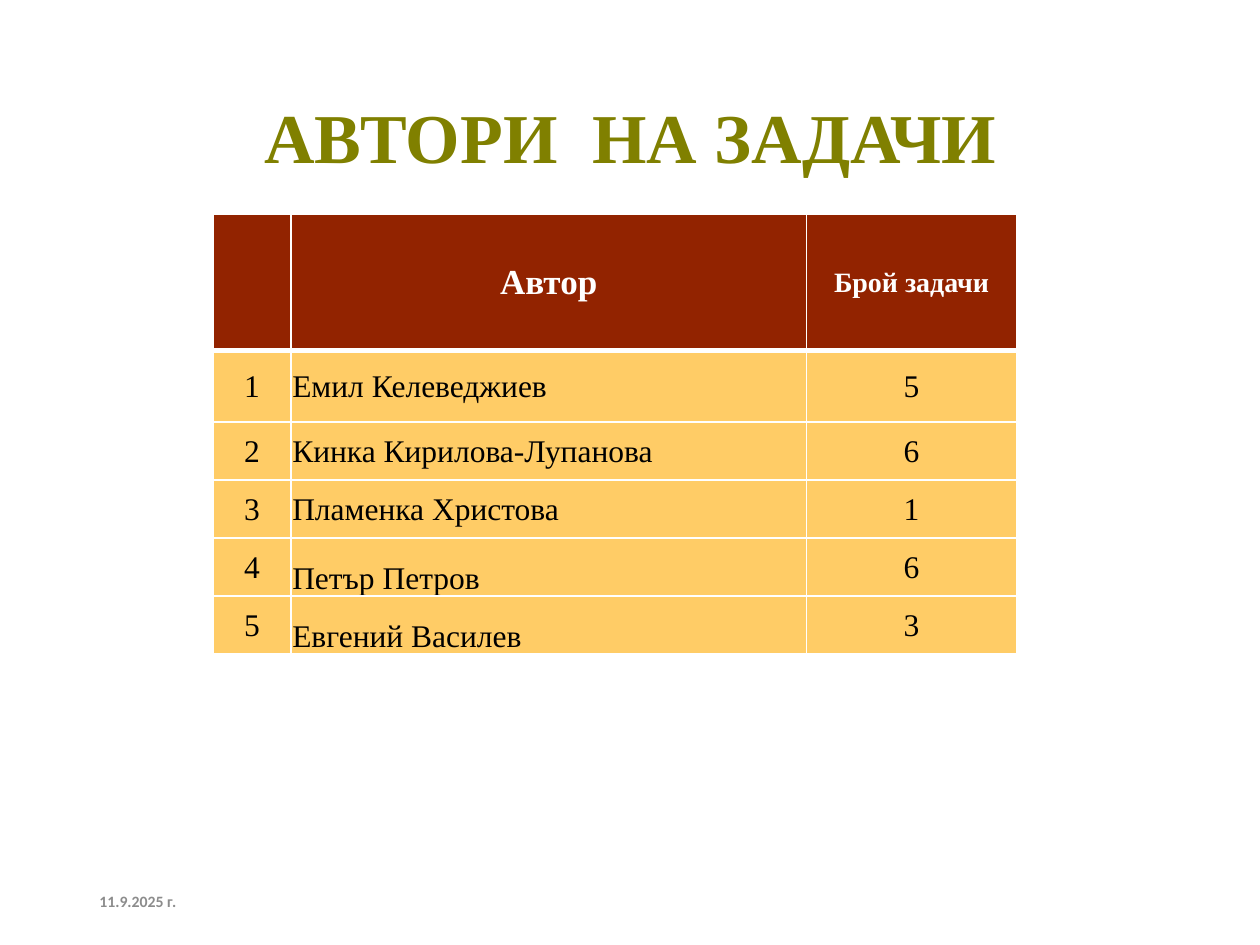
from dataclasses import dataclass

import lxml.etree
import pptx
import pptx.dml.color
import pptx.enum.text
import pptx.oxml.ns
import pptx.util

Pt = pptx.util.Pt
Align = pptx.enum.text.PP_ALIGN
Anchor = pptx.enum.text.MSO_ANCHOR
SERIF = "Times New Roman"
HEADER_FILL = "922300"
BODY_FILL = "FFCC66"
WHITE = "FFFFFF"


@dataclass
class TextStyle:
    size: float
    color: str
    bold: bool = False
    font: str = SERIF
    align: Align = Align.CENTER
    anchor: Anchor = Anchor.MIDDLE


@dataclass
class Author:
    name: str
    tasks: int
    row_height: float = 33.12
    anchor: Anchor = Anchor.MIDDLE


AUTHORS = [
    Author("Емил Келеведжиев", 5, row_height=41.04),
    Author("Кинка Кирилова-Лупанова", 6),
    Author("Пламенка Христова", 1),
    Author("Петър Петров", 6, anchor=Anchor.BOTTOM),
    Author("Евгений Василев", 3, anchor=Anchor.BOTTOM),
]
COLUMN_WIDTHS = [44.64, 294.48, 120.24]
HEADER_HEIGHT = 77.76


def rgb(color: str) -> pptx.dml.color.RGBColor:
    return pptx.dml.color.RGBColor.from_string(color)


def write(frame, text: str, style: TextStyle) -> None:
    frame.text = text
    frame.word_wrap = True
    frame.vertical_anchor = style.anchor
    paragraph = frame.paragraphs[0]
    paragraph.alignment = style.align
    for run in paragraph.runs:
        run.font.name = style.font
        run.font.size = Pt(style.size)
        run.font.bold = style.bold
        run.font.color.rgb = rgb(style.color)


def draw_borders(cell, widths: dict[str, float]) -> None:
    qn = pptx.oxml.ns.qn
    properties = cell._tc.get_or_add_tcPr()
    for position, (side, width) in enumerate(widths.items()):
        line = lxml.etree.Element(qn(f"a:{side}"), w=str(Pt(width)))
        fill = lxml.etree.SubElement(line, qn("a:solidFill"))
        lxml.etree.SubElement(fill, qn("a:srgbClr"), val=WHITE)
        properties.insert(position, line)


def fill_cell(cell, text: str, style: TextStyle, fill: str, top: float, bottom: float) -> None:
    cell.margin_left = cell.margin_right = cell.margin_top = Pt(0.72)
    cell.margin_bottom = Pt(0)
    cell.fill.solid()
    cell.fill.fore_color.rgb = rgb(fill)
    draw_borders(cell, {"lnL": 1, "lnR": 1, "lnT": top, "lnB": bottom})
    write(cell.text_frame, text, style)
    cell.vertical_anchor = style.anchor


def add_authors_table(slide) -> None:
    heights = [HEADER_HEIGHT] + [author.row_height for author in AUTHORS]
    table = slide.shapes.add_table(
        len(heights), len(COLUMN_WIDTHS), Pt(121.68), Pt(122.4),
        Pt(sum(COLUMN_WIDTHS)), Pt(sum(heights)),
    ).table
    for column, width in zip(table.columns, COLUMN_WIDTHS):
        column.width = Pt(width)
    for row, height in zip(table.rows, heights):
        row.height = Pt(height)

    for column, (heading, size) in enumerate([("", 18), ("Автор", 20), ("Брой задачи", 16)]):
        fill_cell(table.cell(0, column), heading, TextStyle(size, WHITE, bold=True), HEADER_FILL, 1, 3)

    centred = TextStyle(18, "000000")
    for number, author in enumerate(AUTHORS, start=1):
        name_style = TextStyle(18, "000000", align=Align.LEFT, anchor=author.anchor)
        entries = [(str(number), centred), (author.name, name_style), (str(author.tasks), centred)]
        for column, (text, style) in enumerate(entries):
            fill_cell(table.cell(number, column), text, style, BODY_FILL, 3 if number == 1 else 1, 1)


def main() -> None:
    presentation = pptx.Presentation()
    presentation.slide_width, presentation.slide_height = Pt(720), Pt(540)
    slide = presentation.slides.add_slide(presentation.slide_layouts[5])

    title = slide.shapes.title
    title.left, title.top, title.width, title.height = Pt(54), Pt(38.16), Pt(612), Pt(84.24)
    write(title.text_frame, "АВТОРИ  НА ЗАДАЧИ", TextStyle(40, "808000", bold=True))
    title.text_frame.paragraphs[0].line_spacing = 0.9

    add_authors_table(slide)

    date = slide.shapes.add_textbox(Pt(49.68), Pt(500.4), Pt(162), Pt(28.8))
    write(date.text_frame, "11.9.2025 г.", TextStyle(9, "8C8C8C", bold=True, font="Calibri", align=Align.LEFT))

    presentation.save("out.pptx")


if __name__ == "__main__":
    main()
